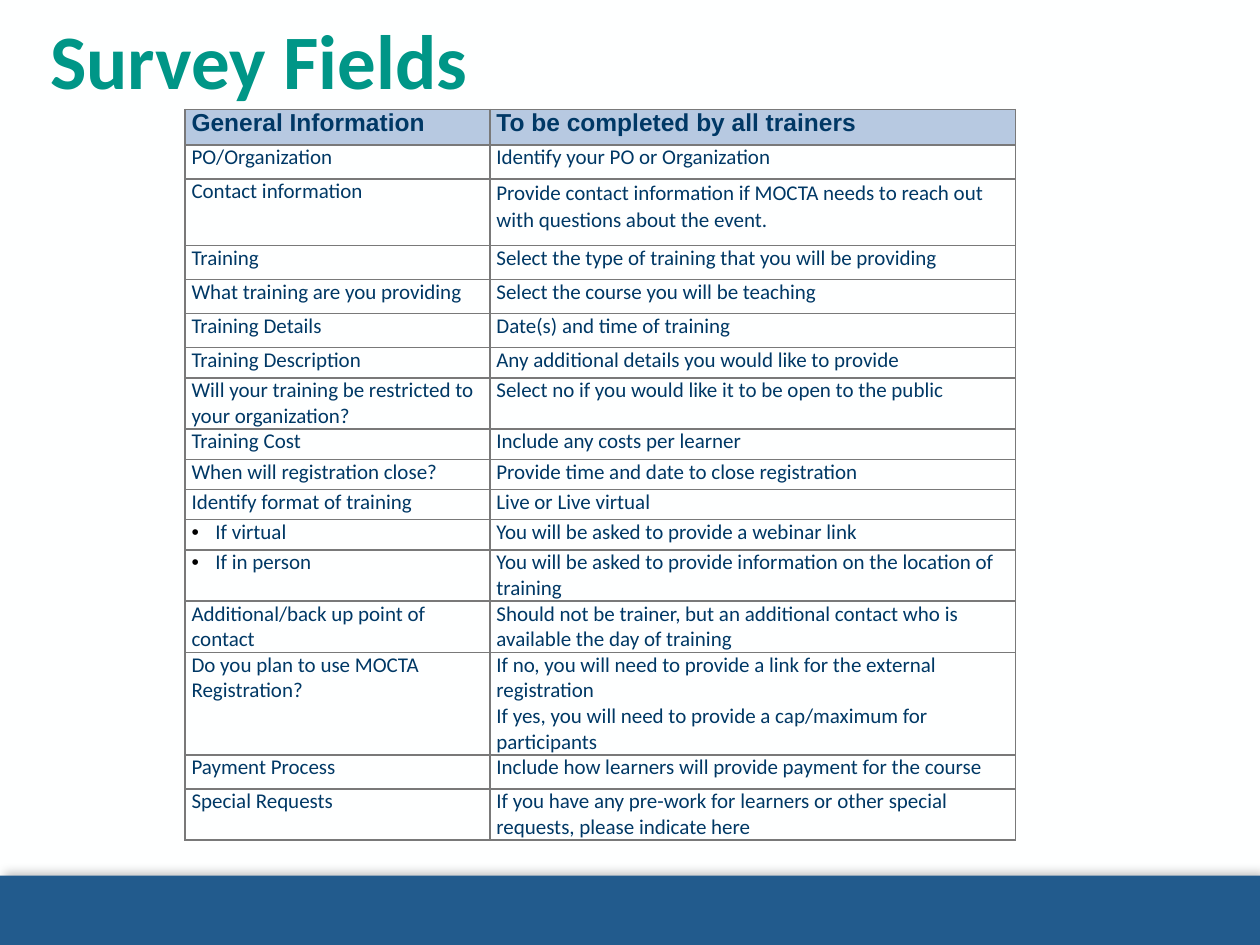
from dataclasses import dataclass

from lxml import etree
from pptx import Presentation
from pptx.dml.color import RGBColor
from pptx.enum import shapes, text
from pptx.oxml import ns
from pptx.util import Inches, Pt

WHITE = RGBColor(0xFE, 0xFF, 0xFF)
NAVY = RGBColor(0x00, 0x38, 0x65)
TEAL = RGBColor(0x00, 0x96, 0x87)
BLUE = RGBColor(0x22, 0x5B, 0x8D)
PALE = RGBColor(0xB7, 0xC9, 0xE1)
GREY = RGBColor(0x79, 0x79, 0x79)
BLACK = RGBColor(0, 0, 0)


@dataclass(frozen=True)
class Row:
    field: str
    help: str
    high: float = 0.24
    dot: bool = False
    lead: float | None = None


@dataclass(frozen=True)
class Style:
    face: str
    size: int
    color: RGBColor
    bold: bool = False


HEAD = Style("Arial", 14, NAVY, True)
BODY = Style("Calibri", 12, NAVY)
TITLE = Style("Calibri", 44, TEAL, True)

ROWS = [
    Row("General Information", "To be completed by all trainers", 0.28),
    Row("PO/Organization", "Identify your PO or Organization", 0.27),
    Row("Contact information",
        "Provide contact information if MOCTA needs to reach out with questions about the event.",
        0.53, lead=1.07),
    Row("Training", "Select the type of training that you will be providing", 0.27),
    Row("What training are you providing", "Select the course you will be teaching", 0.27),
    Row("Training Details", "Date(s) and time of training", 0.27),
    Row("Training Description", "Any additional details you would like to provide"),
    Row("Will your training be restricted to your organization?",
        "Select no if you would like it to be open to the public"),
    Row("Training Cost", "Include any costs per learner"),
    Row("When will registration close?", "Provide time and date to close registration"),
    Row("Identify format of training", "Live or Live virtual"),
    Row("If virtual", "You will be asked to provide a webinar link", dot=True),
    Row("If in person",
        "You will be asked to provide information on the location of training", dot=True),
    Row("Additional/back up point of contact",
        "Should not be trainer, but an additional contact who is available the day of training"),
    Row("Do you plan to use MOCTA Registration?",
        "If no, you will need to provide a link for the external registration\n"
        "If yes, you will need to provide a cap/maximum for participants", 0.48),
    Row("Payment Process", "Include how learners will provide payment for the course", 0.27),
    Row("Special Requests",
        "If you have any pre-work for learners or other special requests, please indicate here",
        0.27),
]


def add(parent, tag: str, **attrs):
    return etree.SubElement(parent, ns.qn(tag), {k: str(v) for k, v in attrs.items()})


def tint(parent, color: RGBColor):
    return add(add(parent, "a:solidFill"), "a:srgbClr", val=color)


def bullet(para) -> None:
    props = para._p.get_or_add_pPr()
    props.set("marL", str(Inches(0.19)))
    props.set("indent", str(-Inches(0.19)))
    add(add(props, "a:buClr"), "a:srgbClr", val=BLACK)
    add(props, "a:buFont", typeface="Arial")
    add(props, "a:buChar", char="•")


def write(frame, words: str, style: Style, dot: bool = False,
          lead: float | None = None) -> None:
    frame.text = words
    for para in frame.paragraphs:
        if dot:
            bullet(para)
        if lead:
            para.line_spacing = lead
        font = para.font
        font.name, font.size, font.bold = style.face, Pt(style.size), style.bold
        font.color.rgb = style.color


def frame_cell(cell, fill: RGBColor) -> None:
    cell.margin_left = cell.margin_right = Inches(0.05)
    cell.margin_top = cell.margin_bottom = 0
    props = cell._tc.get_or_add_tcPr()
    for side in ("L", "R", "T", "B"):
        tint(add(props, f"a:ln{side}", w=Pt(1)), GREY)
    cell.fill.solid()
    cell.fill.fore_color.rgb = fill


def draw_bar(slide) -> None:
    bar = slide.shapes.add_shape(shapes.MSO_SHAPE.RECTANGLE, 0, Inches(6.95),
                                 Inches(10), Inches(0.55))
    bar.fill.solid()
    bar.fill.fore_color.rgb = BLUE
    bar.line.fill.background()
    bar.shadow.inherit = False
    glow = add(bar._element.spPr.find(ns.qn("a:effectLst")), "a:outerShdw",
               blurRad=Pt(6), dist=Pt(3), dir=315 * 60000, rotWithShape=0)
    add(add(glow, "a:srgbClr", val=BLACK), "a:alpha", val=24000)


def draw_grid(slide) -> None:
    grid = slide.shapes.add_table(len(ROWS), 2, Inches(1.47), Inches(0.87),
                                  Inches(6.59), Inches(5.76)).table
    grid.first_row = grid.horz_banding = False
    for col, wide in zip(grid.columns, (2.42, 4.17)):
        col.width = Inches(wide)
    for i, row in enumerate(ROWS):
        grid.rows[i].height = Inches(row.high)
        style, fill = (BODY, WHITE) if i else (HEAD, PALE)
        left, right = grid.cell(i, 0), grid.cell(i, 1)
        write(left.text_frame, row.field, style, dot=row.dot)
        write(right.text_frame, row.help, style, lead=row.lead)
        for cell in (left, right):
            frame_cell(cell, fill)


def draw_title(slide) -> None:
    frame = slide.shapes.add_textbox(Inches(0.3), Inches(0.01),
                                     Inches(6.33), Inches(0.86)).text_frame
    frame.word_wrap = True
    frame.vertical_anchor = text.MSO_ANCHOR.MIDDLE
    write(frame, "Survey Fields", TITLE, lead=1.07)


def main() -> None:
    deck = Presentation()
    deck.slide_width, deck.slide_height = Inches(10), Inches(7.5)
    slide = deck.slides.add_slide(deck.slide_layouts[6])
    slide.background.fill.solid()
    slide.background.fill.fore_color.rgb = WHITE
    draw_bar(slide)
    draw_grid(slide)
    draw_title(slide)
    deck.save("out.pptx")


if __name__ == "__main__":
    main()
